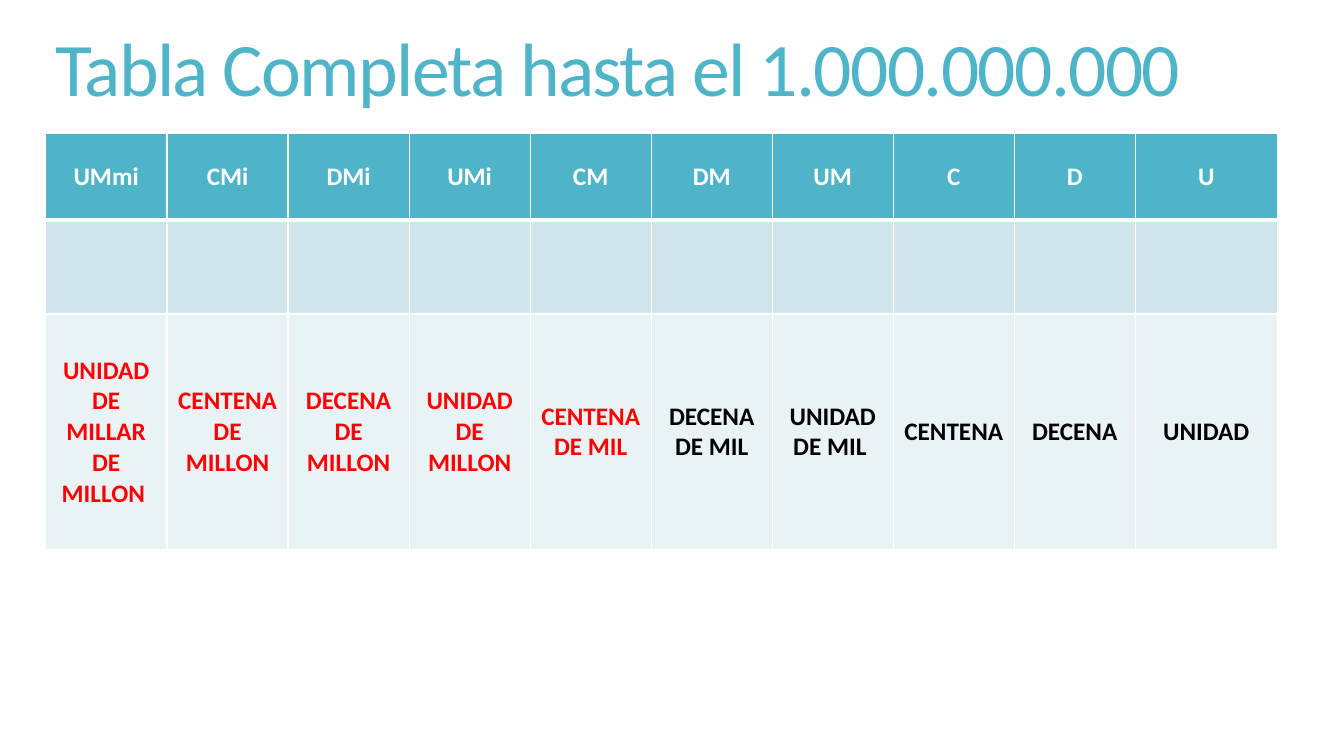
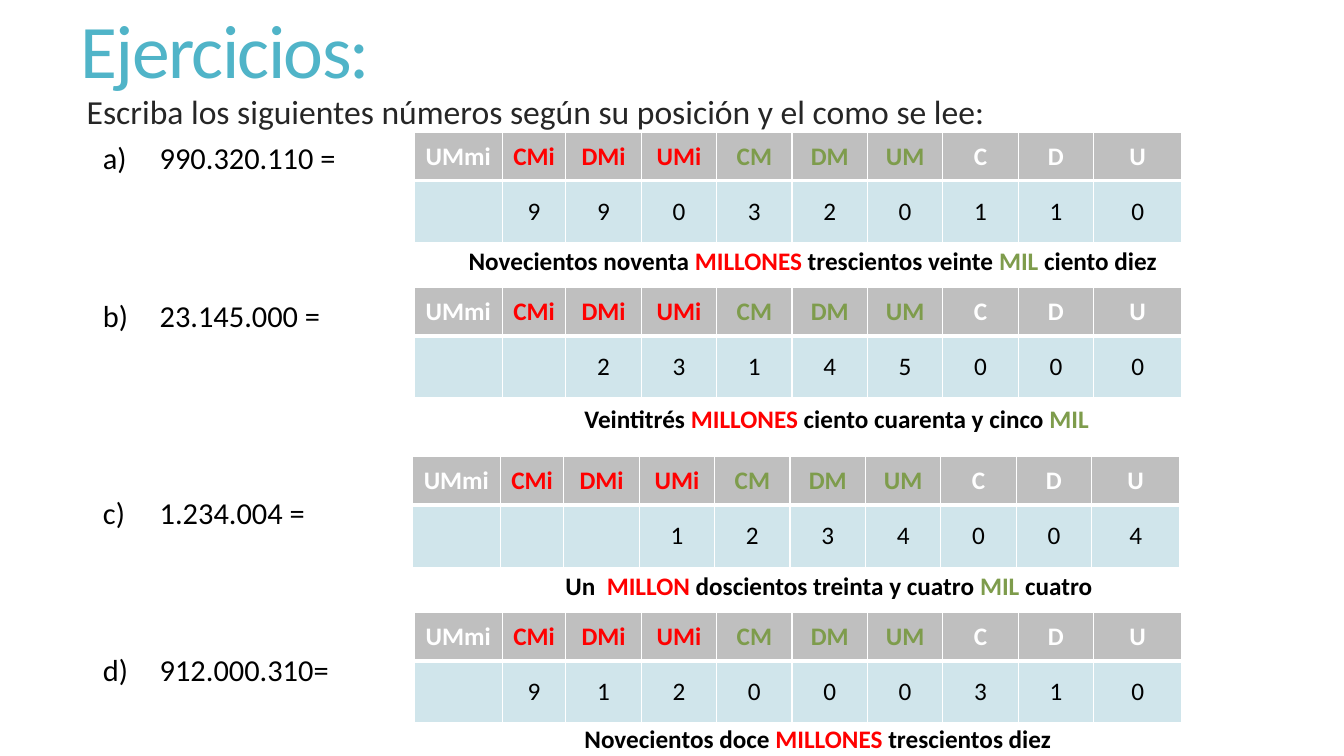
from dataclasses import dataclass
from itertools import groupby

from lxml.etree import SubElement
from pptx import Presentation
from pptx.dml.color import RGBColor
from pptx.enum.text import MSO_ANCHOR, MSO_AUTO_SIZE, PP_ALIGN
from pptx.oxml.ns import qn
from pptx.util import Cm, Pt

FONT = "Calibri"
INK = {
    "teal": "50B4C8",
    "pale": "D0E5EB",
    "mist": "E9F2F5",
    "gray": "BFBFBF",
    "red": "FF0000",
    "green": "7E9C4C",
    "dark": "262626",
    "black": "000000",
    "white": "FFFFFF",
}
WIDE, HIGH = 33.87, 19.05
HEADS = ["UMmi", "CMi", "DMi", "UMi", "CM", "DM", "UM", "C", "D", "U"]
PLACES = [
    "UNIDAD DE MILLAR DE MILLON ", "CENTENA DE MILLON", "DECENA DE MILLON",
    "UNIDAD DE MILLON", "CENTENA DE MIL", "DECENA DE MIL", "UNIDAD DE MIL ",
    "CENTENA", "DECENA", "UNIDAD",
]
WORDS = {"MILLONES": "red", "MILLON": "red", "MIL": "green"}
STEP, LINE = 28.2, 18.5


@dataclass
class Box:
    left: float
    top: float
    width: float
    height: float


@dataclass
class Row:
    texts: list[str]
    inks: list[str]
    fill: str
    height: float
    bold: bool = True


@dataclass
class Task:
    number: str
    steps: int
    left: float
    top: float
    words: str
    start: float
    base: float


TASKS = [
    Task("990.320.110 =", 0, 10.44, 3.33,
         "Novecientos noventa MILLONES trescientos veinte MIL ciento diez", 11.56, 6.05),
    Task("23.145.000 =", 4, 10.44, 7.24,
         "Veintitrés MILLONES ciento cuarenta y cinco MIL", 14.48, 10.03),
    Task("1.234.004 =", 5, 10.39, 11.51,
         "Un  MILLON doscientos treinta y cuatro MIL cuatro", 14, 14.25),
    Task("912.000.310=", 4, 10.44, 15.44,
         "Novecientos doce MILLONES trescientos diez", 14.48, 18.11),
]


def write(par, text: str, size: float = 18, ink: str = "black",
          bold: bool = False, track: int = 0) -> None:
    run = par.add_run()
    run.text = text
    run.font.name = FONT
    run.font.size = Pt(size)
    run.font.bold = bold
    run.font.color.rgb = RGBColor.from_string(INK[ink])
    if track:
        run.font._element.set("spc", str(track))


def place(shape, box: Box):
    shape.left, shape.top = Cm(box.left), Cm(box.top)
    shape.width, shape.height = Cm(box.width), Cm(box.height)
    frame = shape.text_frame
    frame.word_wrap = True
    frame.auto_size = MSO_AUTO_SIZE.NONE
    return frame


def head(slide, text: str, box: Box) -> None:
    frame = place(slide.shapes.title, box)
    frame.vertical_anchor = MSO_ANCHOR.MIDDLE
    par = frame.paragraphs[0]
    par.alignment = PP_ALIGN.LEFT
    par.line_spacing = 0.85
    write(par, text, size=54, ink="teal", track=-120)


def mark(par, left: float, hang: float, kind: str, **attrs: str) -> None:
    props = par._p.get_or_add_pPr()
    props.set("marL", str(Cm(left)))
    props.set("indent", str(Cm(hang)))
    SubElement(props, qn(kind), attrs)


def edge(cell, side: str, width: float) -> None:
    line = SubElement(cell._tc.get_or_add_tcPr(), qn(f"a:ln{side}"), w=str(Pt(width)))
    fill = SubElement(line, qn("a:solidFill"))
    SubElement(fill, qn("a:srgbClr"), val=INK["white"])


def grid(slide, left: float, top: float, cols: list[float], rows: list[Row]) -> None:
    tall = sum(row.height for row in rows)
    table = slide.shapes.add_table(
        len(rows), len(cols), Cm(left), Cm(top), Cm(sum(cols)), Cm(tall)).table
    table.first_row = table.horz_banding = False
    for col, width in zip(table.columns, cols):
        col.width = Cm(width)
    for r, row in enumerate(rows):
        table.rows[r].height = Cm(row.height)
        for c, (text, ink) in enumerate(zip(row.texts, row.inks)):
            cell = table.cell(r, c)
            edge(cell, "L", 1)
            edge(cell, "R", 1)
            edge(cell, "T", 3 if r == 1 else 1)
            edge(cell, "B", 3 if r == 0 else 1)
            cell.fill.solid()
            cell.fill.fore_color.rgb = RGBColor.from_string(INK[row.fill])
            cell.margin_left = cell.margin_right = Cm(0.2)
            cell.vertical_anchor = MSO_ANCHOR.MIDDLE
            par = cell.text_frame.paragraphs[0]
            par.alignment = PP_ALIGN.CENTER
            if text:
                write(par, text, ink=ink, bold=row.bold)


def phrase(slide, text: str, left: float, top: float) -> None:
    box = Box(left, top, WIDE - left, 1.02)
    par = place(slide.shapes.add_textbox(0, 0, 0, 0), box).paragraphs[0]
    parts = groupby(text.split(" "), key=lambda word: WORDS.get(word, "black"))
    runs = [(" ".join(words), ink) for ink, words in parts]
    for i, (words, ink) in enumerate(runs, 1):
        write(par, words + (" " if i < len(runs) else ""), ink=ink, bold=True)


def chart_places(deck) -> None:
    slide = deck.slides.add_slide(deck.slide_layouts[5])
    head(slide, "Tabla Completa hasta el 1.000.000.000", Box(1.14, 0, 29.21, 3.68))
    grid(slide, 1.14, 3.36, [3.07] + [3.05] * 8 + [3.58], [
        Row(HEADS, ["white"] * 10, "teal", 2.18),
        Row([""] * 10, ["black"] * 10, "pale", 2.37),
        Row(PLACES, ["red"] * 5 + ["black"] * 5, "mist", 5.95),
    ])


def drill(deck) -> None:
    slide = deck.slides.add_slide(deck.slide_layouts[3])
    head(slide, "Ejercicios:", Box(1.78, -0.08, 29.92, 2.95))

    par = place(slide.placeholders[1], Box(1.68, 2.31, 29.87, 10.46)).paragraphs[0]
    par.line_spacing = 0.85
    par.space_before = Pt(13)
    mark(par, 0.25, 0, "a:buNone")
    write(par, "Escriba los siguientes números según su posición y el como se lee:",
          size=24, ink="dark")

    frame = place(slide.placeholders[2], Box(2.34, 3.63, 29.21, 14.66))
    cols = [2.22, 1.6] + [1.9] * 7 + [2.22]
    inks = ["white"] + ["red"] * 3 + ["green"] * 3 + ["white"] * 3
    for i, task in enumerate(TASKS):
        par = frame.add_paragraph() if i else frame.paragraphs[0]
        par.line_spacing = 0.7
        par.space_before = Pt(task.steps * STEP - LINE if i else 10)
        mark(par, 1.43, -1.43, "a:buAutoNum", type="alphaLcParenR")
        write(par, task.number, size=21.7)

        digits = "".join(filter(str.isdigit, task.number)).rjust(len(HEADS))
        grid(slide, task.left, task.top, cols, [
            Row(HEADS, inks, "gray", 1.22),
            Row([d.strip() for d in digits], ["black"] * 10, "pale", 1.56, bold=False),
        ])
        phrase(slide, task.words, task.start, task.base)


def main() -> None:
    deck = Presentation()
    deck.slide_width, deck.slide_height = Cm(WIDE), Cm(HIGH)
    chart_places(deck)
    drill(deck)
    deck.save("out.pptx")


if __name__ == "__main__":
    main()
